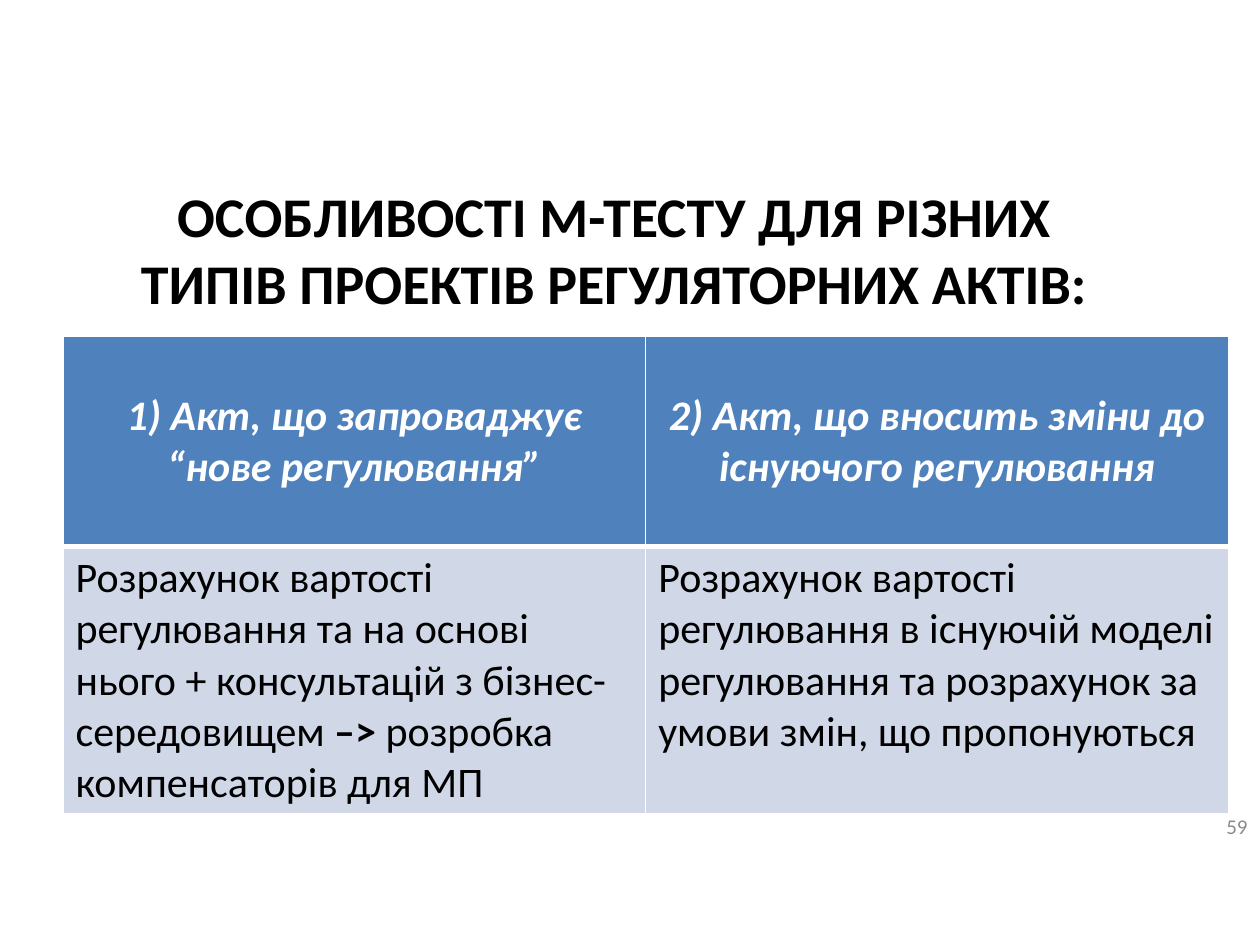
from dataclasses import dataclass

import pptx
import pptx.dml.color
import pptx.enum.text
import pptx.oxml
import pptx.oxml.ns
import pptx.util

Pt = pptx.util.Pt
RGB = pptx.dml.color.RGBColor.from_string
Align = pptx.enum.text.PP_ALIGN
Anchor = pptx.enum.text.MSO_ANCHOR


@dataclass(frozen=True)
class Theme:
    font: str = "Calibri"
    ink: str = "000000"
    white: str = "FFFFFF"
    grey: str = "8C8C8C"
    head: str = "4F81BD"
    body: str = "D0D8E8"
    title: float = 32
    cell: float = 24
    page: float = 12


@dataclass(frozen=True)
class Box:
    left: float
    top: float
    width: float
    height: float

    def area(self) -> tuple:
        return tuple(Pt(v) for v in (self.left, self.top, self.width, self.height))


@dataclass(frozen=True)
class Row:
    height: float
    fill: str
    color: str
    align: Align
    anchor: Anchor
    strong: bool
    base: float  # bottom border width
    texts: tuple


THEME = Theme()
TITLE = "ОСОБЛИВОСТІ М-ТЕСТУ ДЛЯ РІЗНИХ ТИПІВ ПРОЕКТІВ РЕГУЛЯТОРНИХ АКТІВ:"
ROWS = (
    Row(120, THEME.head, THEME.white, Align.CENTER, Anchor.MIDDLE, True, 3, (
        "1) Акт, що запроваджує “нове регулювання”",
        "2) Акт, що вносить зміни до існуючого регулювання",
    )),
    Row(153, THEME.body, THEME.ink, Align.LEFT, Anchor.TOP, False, 1, (
        "Розрахунок вартості регулювання та на основі нього + консультацій "
        "з бізнес-середовищем **–>** розробка компенсаторів для МП",
        "Розрахунок вартості регулювання в існуючій моделі регулювання "
        "та розрахунок за умови змін, що пропонуються",
    )),
)


def write(frame, text: str, *, size: float, color: str, align=Align.LEFT,
          bold: bool = False, italic: bool = False) -> None:
    """Fill a frame with one paragraph; **marked** parts are bold."""
    frame.word_wrap = True
    para = frame.paragraphs[0]
    para.alignment = align
    for i, part in enumerate(text.split("**")):
        run = para.add_run()
        run.text = part
        font = run.font
        font.name, font.size = THEME.font, Pt(size)
        font.bold, font.italic = bold or i % 2 == 1, italic
        font.color.rgb = RGB(color)


def label(slide, box: Box, text: str, anchor=Anchor.TOP, **style) -> None:
    frame = slide.shapes.add_textbox(*box.area()).text_frame
    frame.vertical_anchor = anchor
    write(frame, text, **style)


def edge(cell, sides: dict[str, float]) -> None:
    """Draw white cell borders; they must come before the fill."""
    props = cell._tc.get_or_add_tcPr()
    for i, (side, width) in enumerate(sides.items()):
        props.insert(i, pptx.oxml.parse_xml(
            f'<a:ln{side} {pptx.oxml.ns.nsdecls("a")} w="{Pt(width)}">'
            f'<a:solidFill><a:srgbClr val="{THEME.white}"/></a:solidFill>'
            f'</a:ln{side}>'))


def grid(slide, box: Box, rows: tuple[Row, ...]) -> None:
    cols = len(rows[0].texts)
    table = slide.shapes.add_table(len(rows), cols, *box.area()).table
    for col in table.columns:
        col.width = Pt(box.width / cols)
    top = 1
    for r, row in enumerate(rows):
        table.rows[r].height = Pt(row.height)
        for c, text in enumerate(row.texts):
            cell = table.cell(r, c)
            cell.fill.solid()
            cell.fill.fore_color.rgb = RGB(row.fill)
            cell.vertical_anchor = row.anchor
            edge(cell, {"L": 1, "R": 1, "T": top, "B": row.base})
            write(cell.text_frame, text, size=THEME.cell, color=row.color,
                  align=row.align, bold=row.strong, italic=row.strong)
        top = row.base


def main() -> None:
    deck = pptx.Presentation()
    deck.slide_width, deck.slide_height = Pt(720), Pt(540)
    slide = deck.slides.add_slide(deck.slide_layouts[6])
    label(slide, Box(672, 451.5, 48, 41), "59", Anchor.MIDDLE,
          size=THEME.page, color=THEME.grey, align=Align.RIGHT)
    label(slide, Box(72, 100, 558, 85), TITLE, size=THEME.title,
          color=THEME.ink, align=Align.CENTER, bold=True)
    grid(slide, Box(36, 192.25, 666, sum(row.height for row in ROWS)), ROWS)
    deck.save("out.pptx")


if __name__ == "__main__":
    main()
